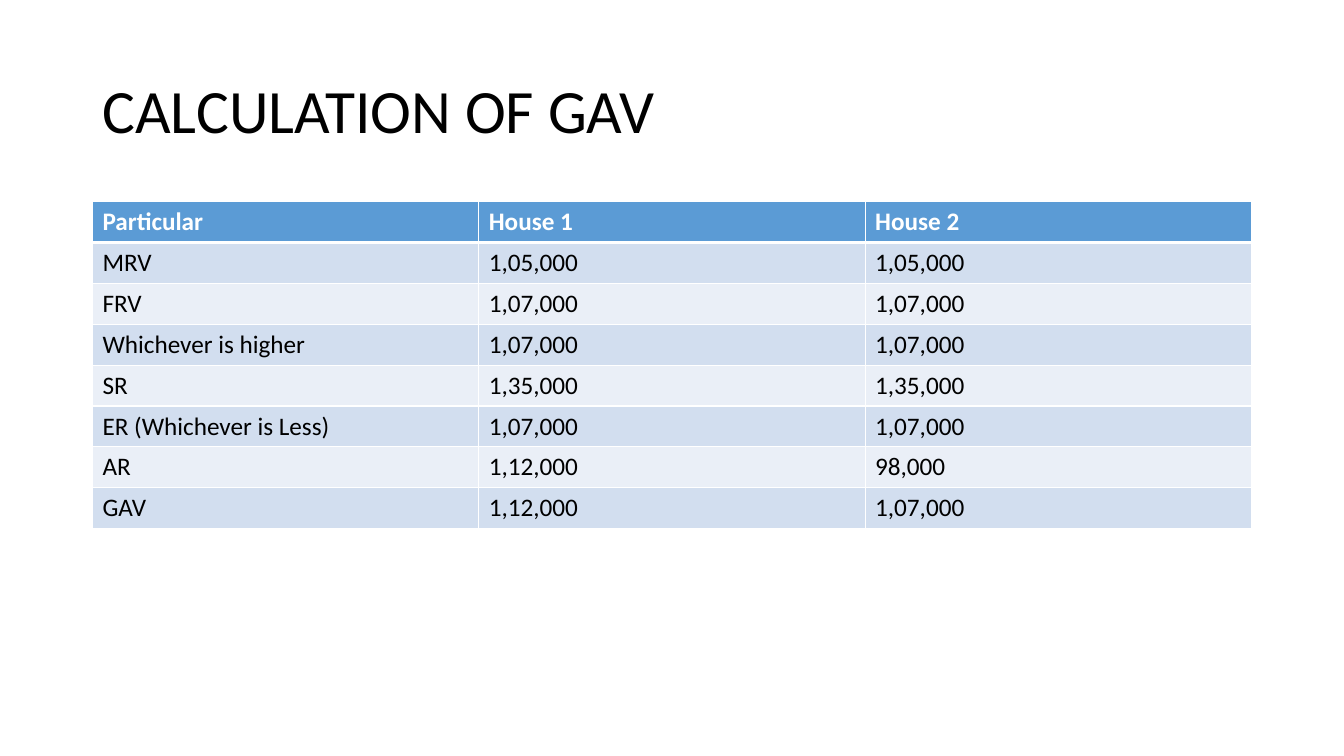
from lxml.etree import SubElement
from pptx import Presentation
from pptx.dml.color import RGBColor
from pptx.enum.text import MSO_ANCHOR, PP_ALIGN
from pptx.oxml.ns import qn
from pptx.util import Cm, Pt

WHITE = RGBColor(0xFF, 0xFF, 0xFF)
BLACK = RGBColor(0x00, 0x00, 0x00)
HEADER_BLUE = RGBColor(0x5B, 0x9B, 0xD5)
BAND_DARK = RGBColor(0xD2, 0xDE, 0xEF)
BAND_LIGHT = RGBColor(0xEA, 0xEF, 0xF7)

ROWS = [
    ("Particular", "House 1", "House 2"),
    ("MRV", "1,05,000", "1,05,000"),
    ("FRV", "1,07,000", "1,07,000"),
    ("Whichever is higher", "1,07,000", "1,07,000"),
    ("SR", "1,35,000", "1,35,000"),
    ("ER (Whichever is Less)", "1,07,000", "1,07,000"),
    ("AR", "1,12,000", "98,000"),
    ("GAV", "1,12,000", "1,07,000"),
]


def format_text(paragraph, size, color, bold):
    font = paragraph.runs[0].font
    for name, value in {"name": "Calibri", "size": Pt(size), "bold": bold}.items():
        setattr(font, name, value)
    font.color.rgb = color


def add_border(cell, side, width):
    properties = cell._tc.get_or_add_tcPr()
    line = SubElement(properties, qn(f"a:ln{side}"), w=str(Pt(width)))
    fill = SubElement(line, qn("a:solidFill"))
    SubElement(fill, qn("a:srgbClr"), val=str(WHITE))


presentation = Presentation()
presentation.slide_width = Cm(33.87)
presentation.slide_height = Cm(19.05)
slide = presentation.slides.add_slide(presentation.slide_layouts[5])

title = slide.shapes.title
title_box = {"left": Cm(2.33), "top": Cm(1.01), "width": Cm(29.21), "height": Cm(3.68)}
for name, value in title_box.items():
    setattr(title, name, value)
title.text_frame.text = "CALCULATION OF GAV"
title.text_frame.vertical_anchor = MSO_ANCHOR.MIDDLE
paragraph = title.text_frame.paragraphs[0]
paragraph.alignment = PP_ALIGN.LEFT
paragraph.line_spacing = 0.9
format_text(paragraph, 44, BLACK, False)

row_height = Cm(1.03)
table = slide.shapes.add_table(
    len(ROWS), len(ROWS[0]), Cm(2.33), Cm(5.08), Cm(29.21), row_height * len(ROWS)
).table
for row in table.rows:
    row.height = row_height

for row_index, texts in enumerate(ROWS):
    is_header = row_index == 0
    if is_header:
        fill_color = HEADER_BLUE
    else:
        fill_color = BAND_DARK if row_index % 2 else BAND_LIGHT
    borders = {
        "L": 1,
        "R": 1,
        "T": 3 if row_index == 1 else 1,
        "B": 3 if is_header else 1,
    }
    for column_index, text in enumerate(texts):
        cell = table.cell(row_index, column_index)
        cell.text = text
        format_text(
            cell.text_frame.paragraphs[0], 18, WHITE if is_header else BLACK, is_header
        )
        for side, width in borders.items():
            add_border(cell, side, width)
        cell.fill.solid()
        cell.fill.fore_color.rgb = fill_color

presentation.save("out.pptx")
